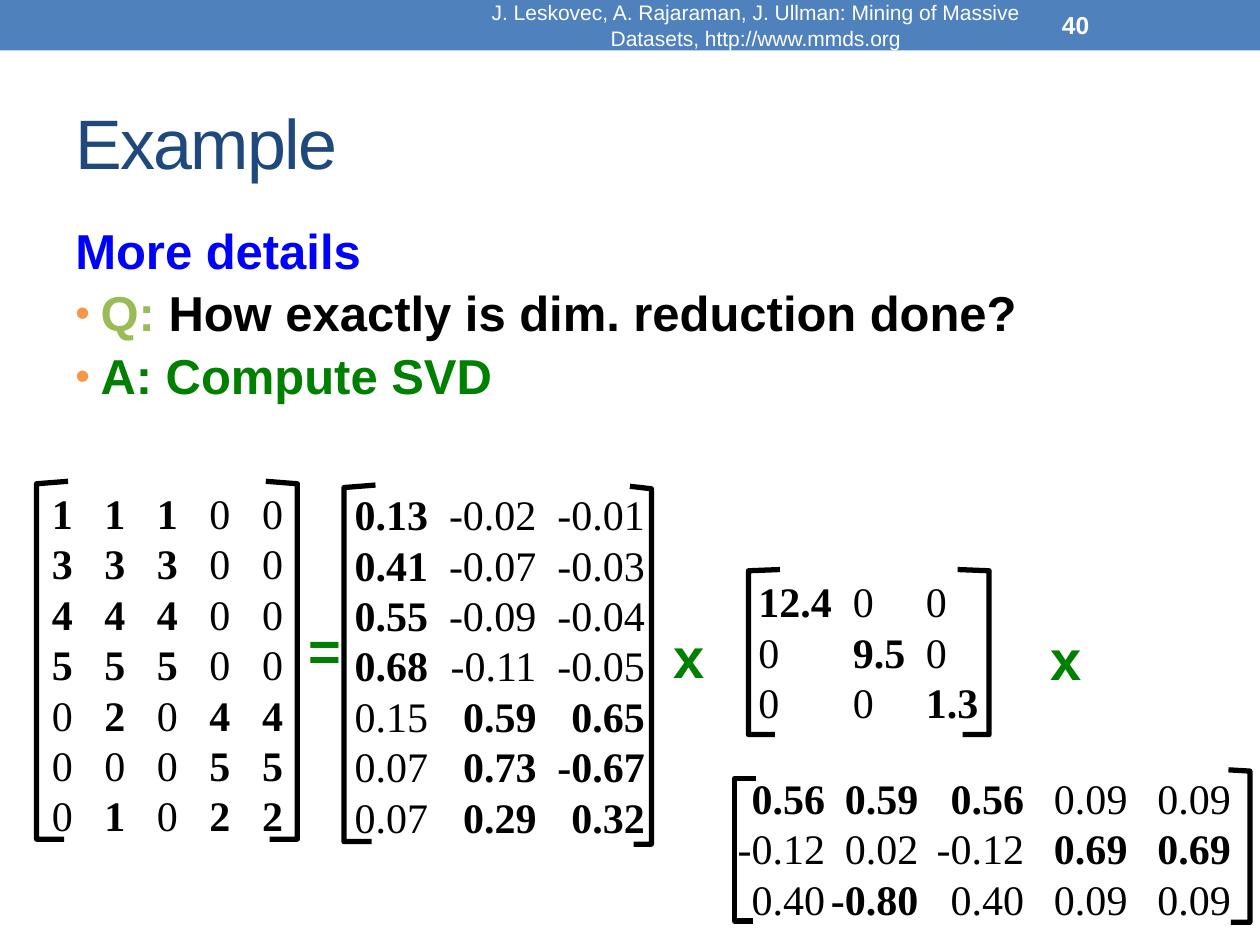
from lxml.etree import SubElement
from pptx import Presentation
from pptx.dml.color import RGBColor
from pptx.enum.shapes import MSO_SHAPE
from pptx.enum.text import MSO_ANCHOR, PP_ALIGN
from pptx.oxml.ns import qn
from pptx.util import Inches, Pt

BLACK, WHITE, GREEN = "000000", "FFFFFF", "008000"
SANS, SERIF = "Arial", "Times New Roman"

RATINGS = ["*1 *1 *1 0 0", "*3 *3 *3 0 0", "*4 *4 *4 0 0", "*5 *5 *5 0 0",
           "0 *2 0 *4 *4", "0 0 0 *5 *5", "0 *1 0 *2 *2"]
LEFT_VECTORS = ["*0.13 -0.02 -0.01", "*0.41 -0.07 -0.03", "*0.55 -0.09 -0.04",
                "*0.68 -0.11 -0.05", "0.15 *0.59 *0.65", "0.07 *0.73 *-0.67",
                "0.07 *0.29 *0.32"]
SINGULAR_VALUES = ["*12.4 0 0", "0 *9.5 0", "0 0 *1.3"]
RIGHT_VECTORS = ["*0.56 *0.59 *0.56 0.09 0.09", "-0.12 0.02 -0.12 *0.69 *0.69",
                 "0.40 *-0.80 0.40 0.09 0.09"]

MATRICES = [
    (RATINGS, (0.25, 3.82, 2.17, 2.93), "r", [0.23 + 0.417 * i for i in range(5)]),
    (SINGULAR_VALUES, (5.82, 4.52, 2.27, 1.31), "l", [0.1, 0.85, 1.43]),
    (LEFT_VECTORS, (2.6, 3.83, 2.75, 2.93), "r", [0.7, 1.56, 2.42]),
    (RIGHT_VECTORS, (5.75, 6.08, 4.25, 1.31), "r", [0.7, 1.44, 2.28, 3.1, 3.92]),
]

BRACKETS = [
    (0.54, 0.29, 0.51, 3.82, 3.84, 6.66),
    (2.11, 2.36, 2.14, 3.82, 3.84, 6.66),
    (2.98, 2.73, 2.95, 3.85, 3.87, 6.68),
    (5.0, 5.17, 5.03, 3.86, 3.88, 6.7),
    (6.19, 5.94, 6.15, 4.52, 4.53, 5.83),
    (7.6, 7.85, 7.64, 4.52, 4.53, 5.83),
    (6.0, 5.83, 5.98, 6.18, 6.18, 7.31),
    (9.75, 9.92, 9.77, 6.11, 6.12, 7.32),
]


def color(value):
    return RGBColor.from_string(value)


def add_box(page, area, anchor=MSO_ANCHOR.TOP, wrap=True):
    box = page.shapes.add_textbox(*map(Inches, area))
    for name, value in {"word_wrap": wrap, "vertical_anchor": anchor}.items():
        setattr(box.text_frame, name, value)
    return box.text_frame


def add_paragraph(frame, first):
    return frame.paragraphs[0] if first else frame.add_paragraph()


def add_span(para, text, size, fill, bold=False, name=SANS):
    span = para.add_run()
    span.text = text
    for key, value in {"size": Pt(size), "bold": bold, "name": name}.items():
        setattr(span.font, key, value)
    span.font.color.rgb = color(fill)
    return span


def add_label(page, area, text, size, fill, bold=False, align=PP_ALIGN.LEFT, wrap=True):
    para = add_box(page, area, MSO_ANCHOR.MIDDLE, wrap).paragraphs[0]
    para.alignment = align
    return add_span(para, text, size, fill, bold)


def add_header_band(page):
    band = page.shapes.add_shape(MSO_SHAPE.RECTANGLE, 0, 0, Inches(10), Inches(0.4))
    band.shadow.inherit = False
    band.fill.solid()
    band.fill.fore_color.rgb = color("4F81BD")
    band.line.fill.background()


def add_bullet(properties):
    tint = SubElement(properties, qn("a:buClr"))
    SubElement(tint, qn("a:srgbClr"), val="F79646")
    SubElement(properties, qn("a:buSzPct"), val="85000")
    SubElement(properties, qn("a:buFont"), typeface=SANS)
    SubElement(properties, qn("a:buChar"), char="•")


def add_body(page, items):
    frame = add_box(page, (0.5, 1.75, 9, 5.33))
    for index, (bulleted, spans) in enumerate(items):
        para = add_paragraph(frame, index == 0)
        for name, value in {"line_spacing": 0.9, "space_before": Pt(5.6)}.items():
            setattr(para, name, value)
        properties = para._p.get_or_add_pPr()
        properties.set("marL", str(Inches(0.2)))
        properties.set("indent", str(Inches(-0.2)))
        if bulleted:
            add_bullet(properties)
        for text, fill in spans:
            add_span(para, text, 28, fill, bold=True)


def add_matrix(page, rows, area, align, stops):
    frame = add_box(page, area)
    for index, row in enumerate(rows):
        para = add_paragraph(frame, index == 0)
        tabs = SubElement(para._p.get_or_add_pPr(), qn("a:tabLst"))
        for stop in stops:
            SubElement(tabs, qn("a:tab"), pos=str(Inches(stop)), algn=align)
        for cell in row.split():
            add_span(para, "\t" + cell.lstrip("*"), 24, BLACK, cell.startswith("*"), SERIF)


def add_bracket(page, tip, spine, foot, tip_top, top, bottom):
    builder = page.shapes.build_freeform(Inches(tip), Inches(tip_top))
    corners = [(spine, top), (spine, bottom), (foot, bottom)]
    builder.add_line_segments([(Inches(x), Inches(y)) for x, y in corners], close=False)
    bracket = builder.convert_to_shape()
    bracket.shadow.inherit = False
    bracket.fill.background()
    bracket.line.color.rgb = color(BLACK)
    bracket.line.width = Pt(3)


def main():
    deck = Presentation()
    deck.slide_width, deck.slide_height = Inches(10), Inches(7.5)
    page = deck.slides.add_slide(deck.slide_layouts[6])

    add_header_band(page)
    title = add_label(page, (0.5, 0.58, 9, 1.08), "Example", 40, "1F497D")
    title.font._element.set("spc", "-100")
    add_body(page, [
        (False, [("More details", "0000FF")]),
        (True, [("Q: ", "9BBB59"), ("How exactly is dim. reduction done?", BLACK)]),
        (True, [("A: Compute SVD", GREEN)]),
    ])
    credit = ("J. Leskovec, A. Rajaraman, J. Ullman: Mining of Massive Datasets, "
              "http://www.mmds.org")
    add_label(page, (3.75, 0.02, 4.5, 0.36), credit, 12, WHITE, align=PP_ALIGN.CENTER)
    add_label(page, (8.33, 0.02, 1.17, 0.36), "40", 14, WHITE, bold=True)

    for bracket in BRACKETS:
        add_bracket(page, *bracket)
    for sign, left, top in [("=", 2.35, 4.83), ("x", 5.25, 4.89), ("x", 8.24, 4.9)]:
        add_label(page, (left, top, 0.44, 0.64), sign, 32, GREEN, bold=True, wrap=False)
    for matrix in MATRICES:
        add_matrix(page, *matrix)

    deck.save("out.pptx")


if __name__ == "__main__":
    main()
